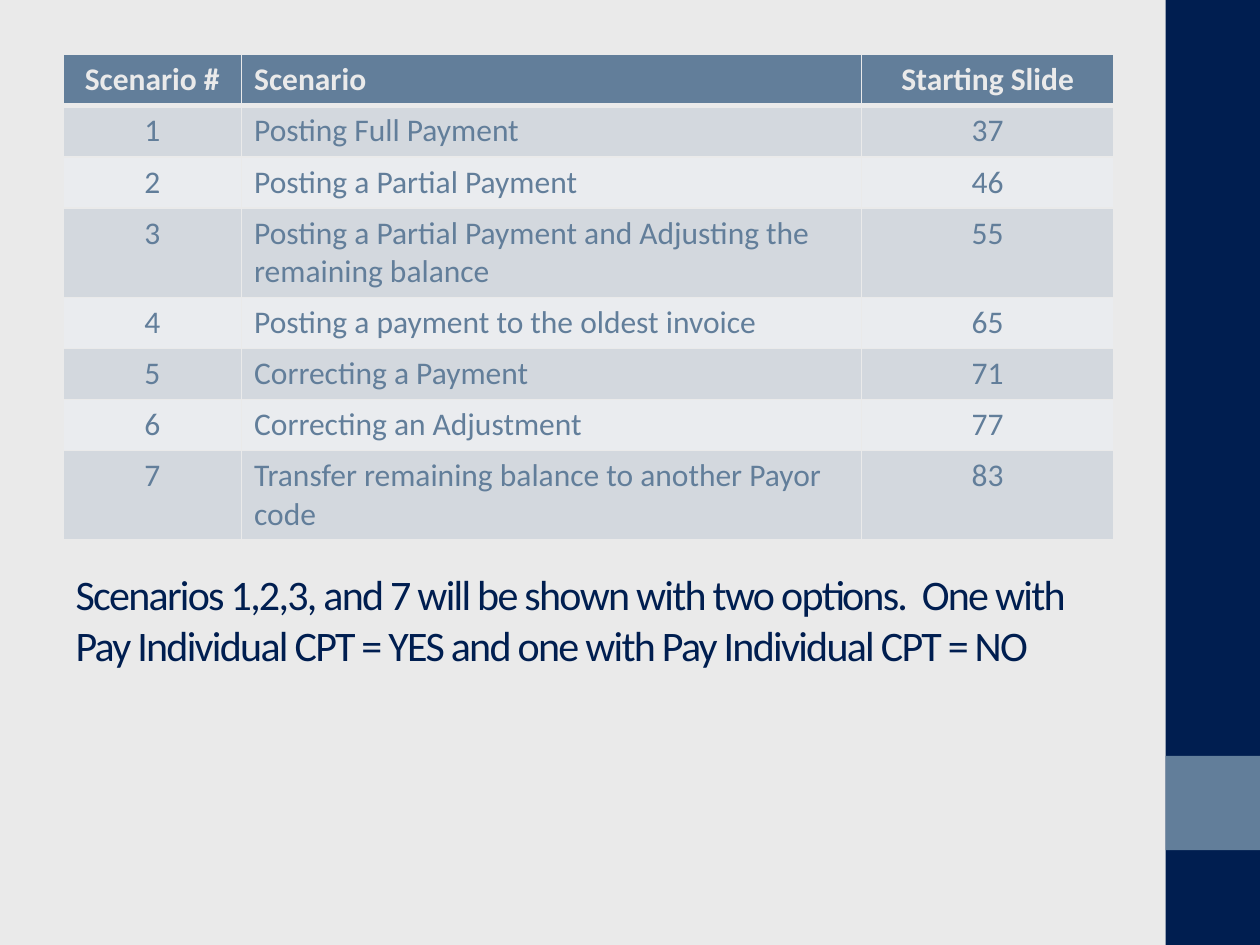
from dataclasses import dataclass

from lxml import etree
from pptx import Presentation
from pptx.dml.color import RGBColor
from pptx.enum.shapes import MSO_SHAPE
from pptx.enum.text import MSO_ANCHOR, MSO_AUTO_SIZE, PP_ALIGN
from pptx.oxml.ns import qn
from pptx.util import Cm, Pt

RECT = MSO_SHAPE.RECTANGLE
MIDDLE = MSO_ANCHOR.MIDDLE
NO_FIT = MSO_AUTO_SIZE.NONE
LEFT, CENTER = PP_ALIGN.LEFT, PP_ALIGN.CENTER


@dataclass(frozen=True)
class Theme:
    paper: str = "EAEAEA"
    navy: str = "001E50"
    steel: str = "627E9A"
    bands: tuple = ("D3D8DE", "EAECEF")
    font: str = "Calibri"
    title: int = 24
    body: int = 18
    thin: int = 1
    thick: int = 3


THEME = Theme()

NOTE = ("Scenarios 1,2,3, and 7 will be shown with two options.  One with "
        "Pay Individual CPT = YES and one with Pay Individual CPT = NO")
HEAD = ("Scenario #", "Scenario", "Starting Slide")
CASES = (
    ("Posting Full Payment", 37),
    ("Posting a Partial Payment", 46),
    ("Posting a Partial Payment and Adjusting the remaining balance", 55),
    ("Posting a payment to the oldest invoice", 65),
    ("Correcting a Payment", 71),
    ("Correcting an Adjustment", 77),
    ("Transfer remaining balance to another Payor code", 83),
)
WIDTHS = (3.6, 12.5, 5.08)
ALIGNS = (CENTER, LEFT, CENTER)
ROW = 1.03


def color(code):
    return RGBColor.from_string(code)


def style(par, size, code, align, bold=False):
    par.alignment = align
    for run in par.runs:
        font = run.font
        font.name, font.size, font.bold = THEME.font, Pt(size), bold
        font.color.rgb = color(code)


def add_block(slide, top, height, code):
    block = slide.shapes.add_shape(RECT, Cm(23.5), Cm(top), Cm(1.9), Cm(height))
    block.shadow.inherit = False
    block.fill.solid()
    block.fill.fore_color.rgb = color(code)
    block.line.fill.background()


def set_title(slide):
    title = slide.shapes.title
    title.left, title.top = Cm(1.27), Cm(10.36)
    title.width, title.height = Cm(21.17), Cm(4.24)
    frame = title.text_frame
    frame.text = NOTE
    frame.word_wrap = True
    frame.auto_size = NO_FIT
    frame.vertical_anchor = MIDDLE
    par = frame.paragraphs[0]
    style(par, THEME.title, THEME.navy, LEFT)
    # Tighten the letters by one point
    par.runs[0].font._element.set("spc", "-100")


def add_edge(cell, side, width):
    props = cell._tc.get_or_add_tcPr()
    line = etree.SubElement(props, qn(f"a:ln{side}"), w=str(Pt(width)))
    fill = etree.SubElement(line, qn("a:solidFill"))
    etree.SubElement(fill, qn("a:srgbClr"), val=THEME.paper)


def set_cell(cell, text, align, row):
    head = row == 0
    cell.text = str(text)
    style(cell.text_frame.paragraphs[0], THEME.body,
          THEME.paper if head else THEME.steel, align, head)
    # The rule under the header is shared by the first two rows
    heavy = {0: "B", 1: "T"}.get(row)
    for side in "LRTB":
        add_edge(cell, side, THEME.thick if side == heavy else THEME.thin)
    cell.fill.solid()
    cell.fill.fore_color.rgb = color(
        THEME.steel if head else THEME.bands[(row - 1) % 2])


def add_grid(slide):
    rows = [HEAD] + [(n, *case) for n, case in enumerate(CASES, 1)]
    table = slide.shapes.add_table(
        len(rows), len(WIDTHS), Cm(1.27), Cm(1.1),
        Cm(sum(WIDTHS)), Cm(ROW * len(rows))).table
    for col, width in zip(table.columns, WIDTHS):
        col.width = Cm(width)
    for r, row in enumerate(rows):
        table.rows[r].height = Cm(ROW)
        for c, text in enumerate(row):
            set_cell(table.cell(r, c), text, ALIGNS[c], r)


def main():
    deck = Presentation()
    deck.slide_width, deck.slide_height = Cm(25.4), Cm(19.05)
    slide = deck.slides.add_slide(deck.slide_layouts[5])
    back = slide.background.fill
    back.solid()
    back.fore_color.rgb = color(THEME.paper)

    # Side band with its accent square
    add_block(slide, 0, 19.05, THEME.navy)
    add_block(slide, 15.24, 1.9, THEME.steel)

    # Note below, scenario list above
    set_title(slide)
    add_grid(slide)
    deck.save("out.pptx")


if __name__ == "__main__":
    main()
